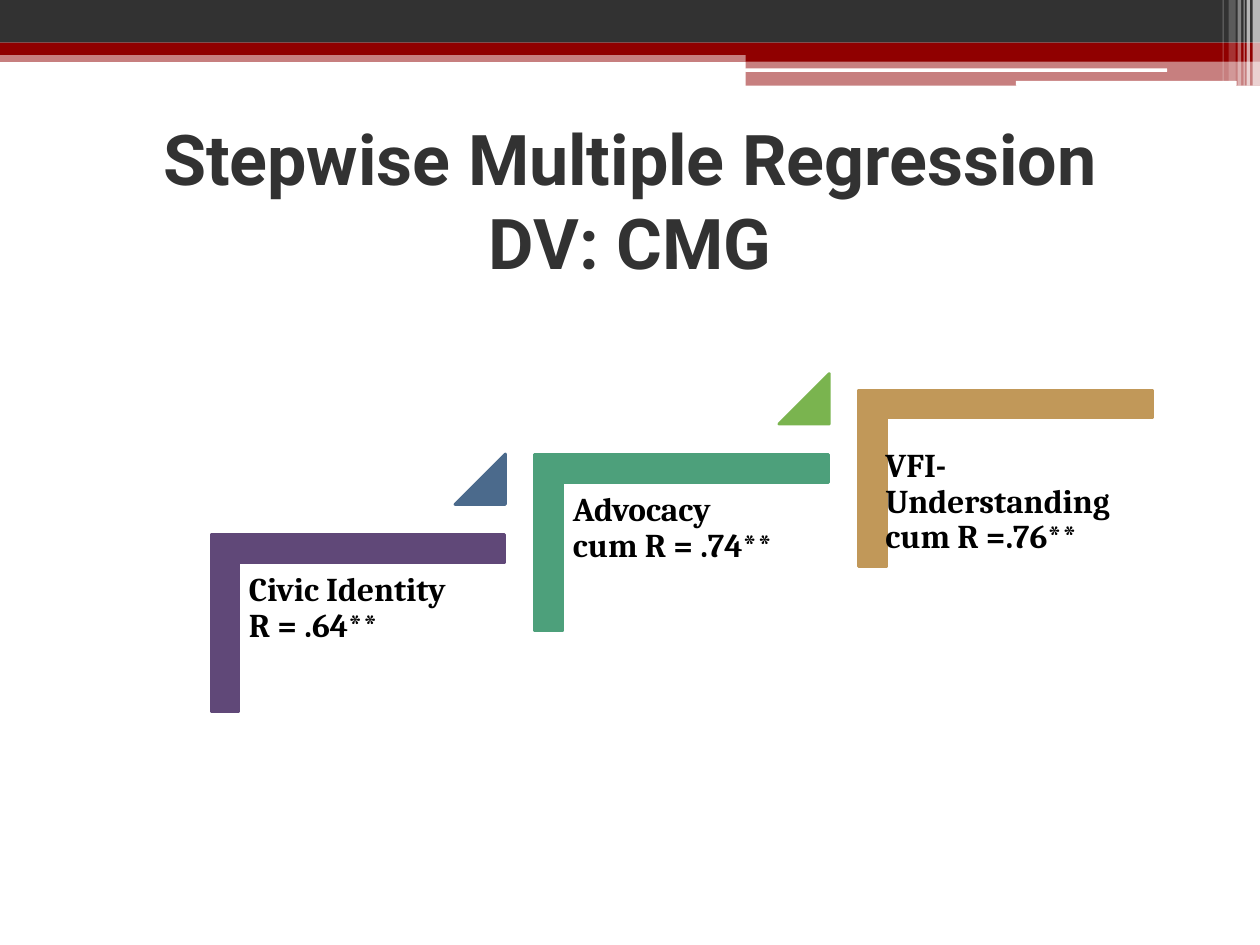
from dataclasses import dataclass
from typing import Optional

from lxml import etree
from pptx import Presentation
from pptx.dml.color import RGBColor
from pptx.enum.shapes import MSO_SHAPE
from pptx.enum.text import MSO_ANCHOR, PP_ALIGN
from pptx.oxml.ns import qn
from pptx.util import Cm, Pt

RECT = MSO_SHAPE.RECTANGLE
ROUND = MSO_SHAPE.ROUNDED_RECTANGLE
CORNER = MSO_SHAPE.CORNER
TRIANGLE = MSO_SHAPE.ISOSCELES_TRIANGLE
TOP, MIDDLE = MSO_ANCHOR.TOP, MSO_ANCHOR.MIDDLE
LEFT, CENTER = PP_ALIGN.LEFT, PP_ALIGN.CENTER

COLORS = {
    "white": "FFFFFF",
    "black": "000000",
    "charcoal": "323232",
    "red": "900000",
    "purple": "604878",
    "blue": "4B6A8C",
    "teal": "4DA07B",
    "green": "7AB44F",
    "tan": "C19859",
}


@dataclass
class Box:
    left: float
    top: float
    width: float
    height: float

    def lengths(self) -> tuple:
        return Cm(self.left), Cm(self.top), Cm(self.width), Cm(self.height)


@dataclass
class Bar:
    box: Box
    color: str
    alpha: int = 100
    kind: int = RECT


@dataclass
class Step:
    top: float
    color: str
    lines: list
    arrow: Optional[str] = None
    text_box: Optional[Box] = None


@dataclass
class TextStyle:
    size: int
    font: str
    color: str
    align: int
    anchor: int
    spacing: float
    inset_x: float
    inset_y: float


TITLE = TextStyle(40, "Roboto", "charcoal", CENTER, MIDDLE, 1.0, 0.25, 0.13)
LABEL = TextStyle(19, "Cambria", "black", LEFT, TOP, 0.9, 0.2, 0.2)

BARS = [
    Bar(Box(0, 1.02, 25.4, 0.23), "red", 50),
    Bar(Box(0, 0, 25.4, 0.86), "charcoal"),
    Bar(Box(0, 0.86, 25.4, 0.25), "red"),
    Bar(Box(15.03, 0.99, 10.37, 0.25), "red"),
    Bar(Box(15.03, 1.23, 10.37, 0.5), "red", 50),
    Bar(Box(15.02, 1.38, 8.51, 0.07), "white", kind=ROUND),
    Bar(Box(20.48, 1.63, 4.45, 0.1), "white", kind=ROUND),
    Bar(Box(25.25, 0, 0.15, 1.73), "white", 65),
    Bar(Box(25.13, 0, 0.07, 1.73), "white", 65),
    Bar(Box(25.07, 0, 0.02, 1.73), "white", 60),
    Bar(Box(24.95, 0, 0.07, 1.73), "white", 40),
    Bar(Box(24.77, 0, 0.14, 1.63), "white", 20),
    Bar(Box(24.65, 0, 0.02, 1.63), "white", 30),
]

STEPS = [
    Step(9.6, "purple", ["Civic Identity", "R = .64**"], "blue"),
    Step(7.98, "teal", ["Advocacy", "cum R = .74**"], "green"),
    Step(6.68, "tan", ["VFI-Understanding", "cum R =.76**"],
         text_box=Box(17.65, 8.84, 5.84, 4.04)),
]
FIRST_LEFT, STEP_PITCH = 5.43, 6.53


def add_filled(s, kind: int, box: Box, color: str, alpha: int = 100, outlined: bool = False):
    sp = s.shapes.add_shape(kind, *box.lengths())
    sp.shadow.inherit = False
    rgb = RGBColor.from_string(COLORS[color])
    sp.fill.solid()
    sp.fill.fore_color.rgb = rgb
    if alpha < 100:
        clr = sp.fill._xPr.find(qn("a:solidFill"))[0]
        etree.SubElement(clr, qn("a:alpha"), val=str(alpha * 1000))
    if outlined:
        sp.line.color.rgb = rgb
        sp.line.width = Pt(1.5)
    else:
        sp.line.fill.background()
    return sp


def add_text(s, box: Box, lines: list, style: TextStyle) -> None:
    tf = s.shapes.add_textbox(*box.lengths()).text_frame
    tf.word_wrap = True
    tf.vertical_anchor = style.anchor
    tf.margin_left = tf.margin_right = Cm(style.inset_x)
    tf.margin_top = tf.margin_bottom = Cm(style.inset_y)
    p = tf.paragraphs[0]
    p.alignment = style.align
    p.line_spacing = style.spacing
    for i, line in enumerate(lines):
        if i:
            p.add_line_break()
        r = p.add_run()
        r.text = line
        r.font.size = Pt(style.size)
        r.font.name = style.font
        r.font.bold = True
        r.font.color.rgb = RGBColor.from_string(COLORS[style.color])


def add_step(s, left: float, step: Step) -> None:
    sp = add_filled(s, CORNER, Box(left, step.top, 3.56, 5.92), step.color, outlined=True)
    sp.rotation = 90
    sp.adjustments[0] = sp.adjustments[1] = 0.16
    text_box = step.text_box or Box(left - 0.61, step.top + 1.75, 5.33, 4.67)
    add_text(s, text_box, step.lines, LABEL)
    if step.arrow:
        box = Box(left + 3.74, step.top - 0.45, 1.02, 1.02)
        sp = add_filled(s, TRIANGLE, box, step.arrow, outlined=True)
        sp.adjustments[0] = 1


def main() -> None:
    prs = Presentation()
    prs.slide_width, prs.slide_height = Cm(25.4), Cm(19.05)
    s = prs.slides.add_slide(prs.slide_layouts[6])
    for bar in BARS:
        add_filled(s, bar.kind, bar.box, bar.color, bar.alpha)
    add_text(s, Box(1.27, 1.9, 22.86, 4.24),
             ["Stepwise Multiple Regression", "DV: CMG"], TITLE)
    for i, step in enumerate(STEPS):
        add_step(s, FIRST_LEFT + i * STEP_PITCH, step)
    prs.save("out.pptx")


if __name__ == "__main__":
    main()
